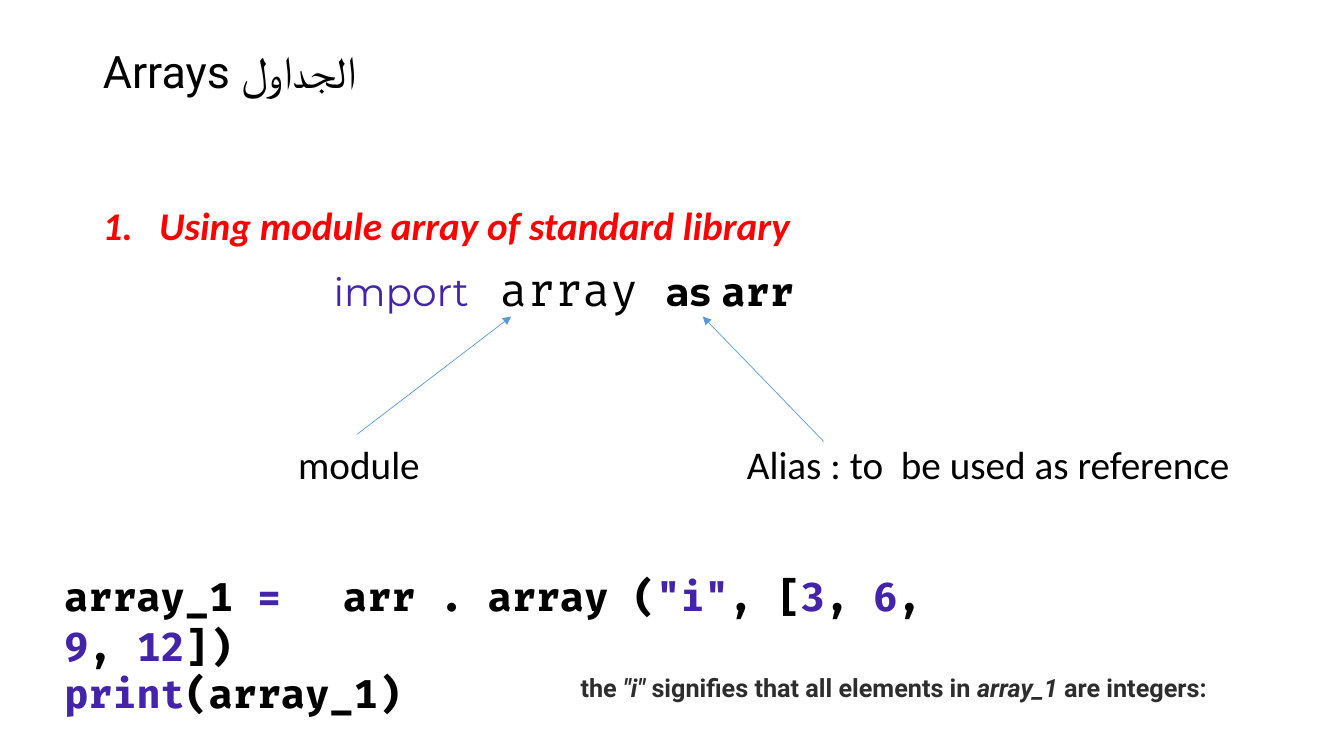
from dataclasses import dataclass

from lxml.etree import SubElement
from pptx import Presentation
from pptx.dml.color import RGBColor
from pptx.enum.shapes import MSO_CONNECTOR
from pptx.enum.text import MSO_ANCHOR, MSO_AUTO_SIZE, PP_ALIGN
from pptx.oxml.ns import qn
from pptx.util import Inches, Pt

BLACK, PURPLE, RED, GREY, BLUE = "000000", "4424A9", "FF0000", "2D2D2D", "5B9BD5"
CODE, BODY, HEAD, ALT = "Fira Code", "Calibri", "Roboto", "Montserrat"


@dataclass
class Run:
    text: str
    font: str = CODE
    size: int = 28
    color: str = BLACK
    bold: bool = True
    italic: bool = False


@dataclass
class Label:
    text: str
    left: float
    width: float


@dataclass
class Arrow:
    start: tuple[float, float]
    end: tuple[float, float]


def rgb(color: str) -> RGBColor:
    return RGBColor.from_string(color)


def add_runs(p, runs: list[Run]) -> None:
    for run in runs:
        r = p.add_run()
        r.text = run.text
        r.font.name, r.font.size = run.font, Pt(run.size)
        r.font.bold, r.font.italic = run.bold, run.italic
        r.font.color.rgb = rgb(run.color)


def add_text(slide, left: float, top: float, width: float, height: float,
             paragraphs: list[list[Run]], wrap: bool = True):
    sp = slide.shapes.add_textbox(Inches(left), Inches(top), Inches(width), Inches(height))
    tf = sp.text_frame
    tf.word_wrap = wrap
    tf.auto_size = MSO_AUTO_SIZE.SHAPE_TO_FIT_TEXT
    for i, runs in enumerate(paragraphs):
        add_runs(tf.add_paragraph() if i else tf.paragraphs[0], runs)
    return tf


def set_indent(p, left: float, first: float = 0) -> None:
    pPr = p._p.get_or_add_pPr()
    pPr.set("marL", str(Inches(left)))
    pPr.set("indent", str(Inches(first)))


def add_arrow(slide, arrow: Arrow) -> None:
    points = [Inches(v) for v in (*arrow.start, *arrow.end)]
    line = slide.shapes.add_connector(MSO_CONNECTOR.STRAIGHT, *points)
    line.line.color.rgb = rgb(BLUE)
    line.line.width = Pt(0.5)
    SubElement(line.line._get_or_add_ln(), qn("a:tailEnd"), type="triangle")
    SubElement(line._element.spPr, qn("a:effectLst"))


def code_runs(*texts: str) -> list[Run]:
    """Alternate black and purple code, starting with black."""
    return [Run(text, color=(BLACK, PURPLE)[i % 2]) for i, text in enumerate(texts) if text]


def main() -> None:
    prs = Presentation()
    prs.slide_width, prs.slide_height = Inches(13.33), Inches(7.5)
    slide = prs.slides.add_slide(prs.slide_layouts[5])

    # Title
    title = slide.shapes.title
    title.left, title.top = Inches(0.92), Inches(0.4)
    title.width, title.height = Inches(11.5), Inches(0.66)
    tf = title.text_frame
    tf.vertical_anchor = MSO_ANCHOR.MIDDLE
    p = tf.paragraphs[0]
    p.alignment, p.line_spacing = PP_ALIGN.LEFT, 0.9
    add_runs(p, [Run("Arrays الجداول", HEAD, 32, bold=False)])

    # Numbered heading and import statement
    tf = add_text(slide, 0.92, 2, 11.5, 1.2, [
        [Run("Using module array of standard library", BODY, color=RED, italic=True)],
        [Run("import", ALT, color=PURPLE, bold=False), Run(" ", size=36, bold=False),
         Run("array ", size=32, bold=False), Run("as ", ALT), Run("arr")],
    ])
    heading, statement = tf.paragraphs
    set_indent(heading, 0.56, -0.56)
    SubElement(heading._p.get_or_add_pPr(), qn("a:buFont"), typeface="+mj-lt")
    SubElement(heading._p.get_or_add_pPr(), qn("a:buAutoNum"), type="arabicPeriod")
    set_indent(statement, 2.29)
    statement.space_before = Pt(10)
    heading.line_spacing = statement.line_spacing = 0.9

    # Explanations and their arrows
    for label in (Label("module", 2.86, 1.5),
                  Label("Alias : to  be used as reference", 7.31, 5.2)):
        add_text(slide, label.left, 4.32, label.width, 0.57,
                 [[Run(label.text, BODY, bold=False)]])
    for arrow in (Arrow((3.54, 4.31), (5.07, 3.14)), Arrow((8.17, 4.38), (6.97, 3.14))):
        add_arrow(slide, arrow)

    # Code example
    add_text(slide, 0.54, 5.52, 9.33, 1.18, [
        [*code_runs("array_1 ", "="), Run("  ", size=36),
         *code_runs("arr . array (", '"i"', ", [", "3", ", ", "6", ", ", "9", ", ", "12", "])")],
        code_runs("", "print", "(array_1)"),
    ])

    # Note on the type code
    note = ["the ", '"i"', " signifies that all elements in ", "array_1", " are integers:"]
    add_text(slide, 5.66, 6.62, 6.95, 0.4, [
        [Run(text, HEAD, 18, GREY, italic=i % 2 == 1) for i, text in enumerate(note)],
    ], wrap=False)

    prs.save("out.pptx")


if __name__ == "__main__":
    main()
